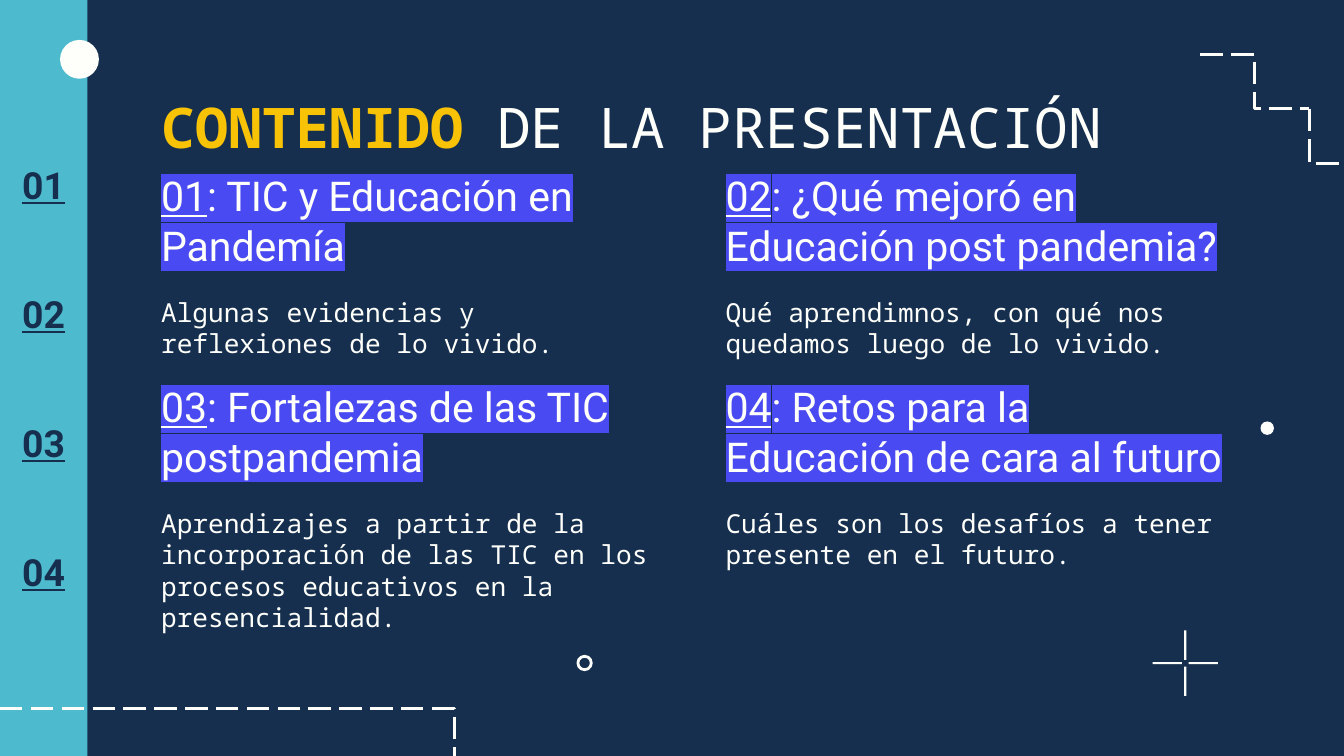
from pptx import Presentation
from pptx.dml.color import RGBColor
from pptx.enum.dml import MSO_LINE
from pptx.enum.shapes import MSO_CONNECTOR, MSO_SHAPE
from pptx.enum.text import MSO_ANCHOR, MSO_AUTO_SIZE, PP_ALIGN
from pptx.oxml.ns import qn
from pptx.util import Pt
from lxml.etree import SubElement, Element

# Content
TITLE = ("CONTENIDO", " DE LA PRESENTACIÓN")
# number, heading, description, description height
SECTIONS = [
    ("01", "TIC y Educación en Pandemía",
     "Algunas evidencias y reflexiones de lo vivido.", 47.5),
    ("02", "¿Qué mejoró en Educación post pandemia?",
     "Qué aprendimnos, con qué nos quedamos luego de lo vivido.", 47.5),
    ("03", "Fortalezas de las TIC postpandemia",
     "Aprendizajes a partir de la incorporación de las TIC en los procesos "
     "educativos en la presencialidad.", 73.5),
    ("04", "Retos para la Educación de cara al futuro",
     "Cuáles son los desafíos a tener presente en el futuro.", 47.5),
]

# Theme: colours and type
NAVY, TEAL, WHITE, GOLD = "162F4F", "4EBACE", "FEFFFA", "F8C207"
THEME = {
    "highlight": "4A4AF2",
    "line": 1.5,
    "title": {"name": "Noto Sans Mono", "size": Pt(30), "bold": False, "color": WHITE},
    "accent": {"name": "Noto Sans Mono", "size": Pt(30), "bold": True, "color": GOLD},
    "heading": {"name": "Roboto", "size": Pt(22), "underline": False, "color": WHITE},
    "number": {"name": "Roboto", "size": Pt(22), "underline": True, "color": WHITE},
    "description": {"name": "Noto Sans Mono", "size": Pt(14), "color": WHITE},
    "index": {"name": "Roboto", "size": Pt(20), "bold": True, "underline": True,
              "color": NAVY},
}

# Layout, in points
SLIDE_W, SLIDE_H = 720, 405
SIDEBAR_W = 46.8
GRID_LEFT, GRID_TOP = 79.2, 112.3
COLUMN_STEP, ROW_STEP, COLUMN_W = 302.4, 113, 281.5
HEADING_H = 39.2
INDEX_TOP, INDEX_STEP = 79.2, 69.1

presentation = Presentation()
presentation.slide_width, presentation.slide_height = Pt(SLIDE_W), Pt(SLIDE_H)
slide = presentation.slides.add_slide(presentation.slide_layouts[5])
shapes = slide.shapes
slide.background.fill.solid()
slide.background.fill.fore_color.rgb = RGBColor.from_string(NAVY)


def add_figure(kind, left, top, width, height, fill=WHITE):
    figure = shapes.add_shape(kind, Pt(left), Pt(top), Pt(width), Pt(height))
    figure.shadow.inherit = False
    if fill:
        figure.fill.solid()
        figure.fill.fore_color.rgb = RGBColor.from_string(fill)
        figure.line.fill.background()
    else:
        figure.fill.background()
        figure.line.color.rgb = RGBColor.from_string(WHITE)
        figure.line.width = Pt(THEME["line"])


def add_dashed_elbow(left, top, width, height, bend=0.5, **turn):
    elbow = shapes.add_connector(MSO_CONNECTOR.ELBOW, Pt(left), Pt(top),
                                 Pt(left + width), Pt(top + height))
    elbow.line.color.rgb = RGBColor.from_string(WHITE)
    elbow.line.width = Pt(THEME["line"])
    elbow.line.dash_style = MSO_LINE.LONG_DASH
    properties = elbow._element.spPr
    SubElement(properties, qn("a:effectLst"))
    for key, value in turn.items():
        properties.find(qn("a:xfrm")).set(key, value)
    SubElement(properties.find(".//" + qn("a:avLst")), qn("a:gd"),
               name="adj1", fmla=f"val {round(bend * 100000)}")


def fill_text(holder, runs, anchor=MSO_ANCHOR.TOP, align=PP_ALIGN.LEFT, highlight=None):
    frame = holder.text_frame
    settings = {"word_wrap": True, "auto_size": MSO_AUTO_SIZE.NONE,
                "vertical_anchor": anchor}
    settings.update({f"margin_{side}": Pt(7.2)
                     for side in ("left", "right", "top", "bottom")})
    for key, value in settings.items():
        setattr(frame, key, value)
    paragraph = frame.paragraphs[0]
    paragraph.alignment = align
    for words, style in runs:
        run = paragraph.add_run()
        run.text = words
        for key, value in THEME[style].items():
            if key == "color":
                run.font.color.rgb = RGBColor.from_string(value)
            else:
                setattr(run.font, key, value)
        if highlight:
            marker = Element(qn("a:highlight"))
            SubElement(marker, qn("a:srgbClr"), val=highlight)
            run.font._element.find(qn("a:solidFill")).addnext(marker)


def add_text(left, top, width, height, runs, **options):
    box = shapes.add_textbox(Pt(left), Pt(top), Pt(width), Pt(height))
    fill_text(box, runs, **options)


# Sidebar and decorations
add_figure(MSO_SHAPE.RECTANGLE, 0, 0, SIDEBAR_W, SLIDE_H, TEAL)
add_dashed_elbow(643, 29.2, 58.5, 29)
add_dashed_elbow(686.9, 72.8, 58.5, 29.3, rot="16200000", flipH="1")
add_dashed_elbow(0, 379.4, 157, 80.6, bend=1.55)
add_figure(MSO_SHAPE.OVAL, 675.3, 225.8, 7.2, 7.2)
add_figure(MSO_SHAPE.OVAL, 32.2, 21.4, 20.8, 20.8)
add_figure(MSO_SHAPE.OVAL, 309.6, 351.6, 7.2, 7.2, None)

# Cross of four arms around an open centre
CROSS_X, CROSS_Y, ARM, GAP, THICK = 635, 355.3, 15.7, 1.8, 1.2
for offset in (-GAP - ARM, GAP):
    add_figure(MSO_SHAPE.RECTANGLE, CROSS_X - THICK / 2, CROSS_Y + offset, THICK, ARM)
    add_figure(MSO_SHAPE.RECTANGLE, CROSS_X + offset, CROSS_Y - THICK / 2, ARM, THICK)

# Title
title = shapes.title
title.left, title.top, title.width, title.height = Pt(79.2), Pt(42.5), Pt(584.6), Pt(50.4)
fill_text(title, zip(TITLE, ("accent", "title")))

# Sections in a two-by-two grid, with their index in the sidebar
for position, (number, heading, description, description_h) in enumerate(SECTIONS):
    row, column = divmod(position, 2)
    left = GRID_LEFT + column * COLUMN_STEP
    top = GRID_TOP + row * ROW_STEP
    add_text(left, top, COLUMN_W, HEADING_H,
             [(number, "number"), (": " + heading, "heading")],
             anchor=MSO_ANCHOR.BOTTOM, highlight=THEME["highlight"])
    add_text(left, top + HEADING_H, COLUMN_W, description_h,
             [(description, "description")])
    add_text(0, INDEX_TOP + position * INDEX_STEP, SIDEBAR_W, HEADING_H,
             [(number, "index")], anchor=MSO_ANCHOR.MIDDLE, align=PP_ALIGN.CENTER)

presentation.save("out.pptx")
